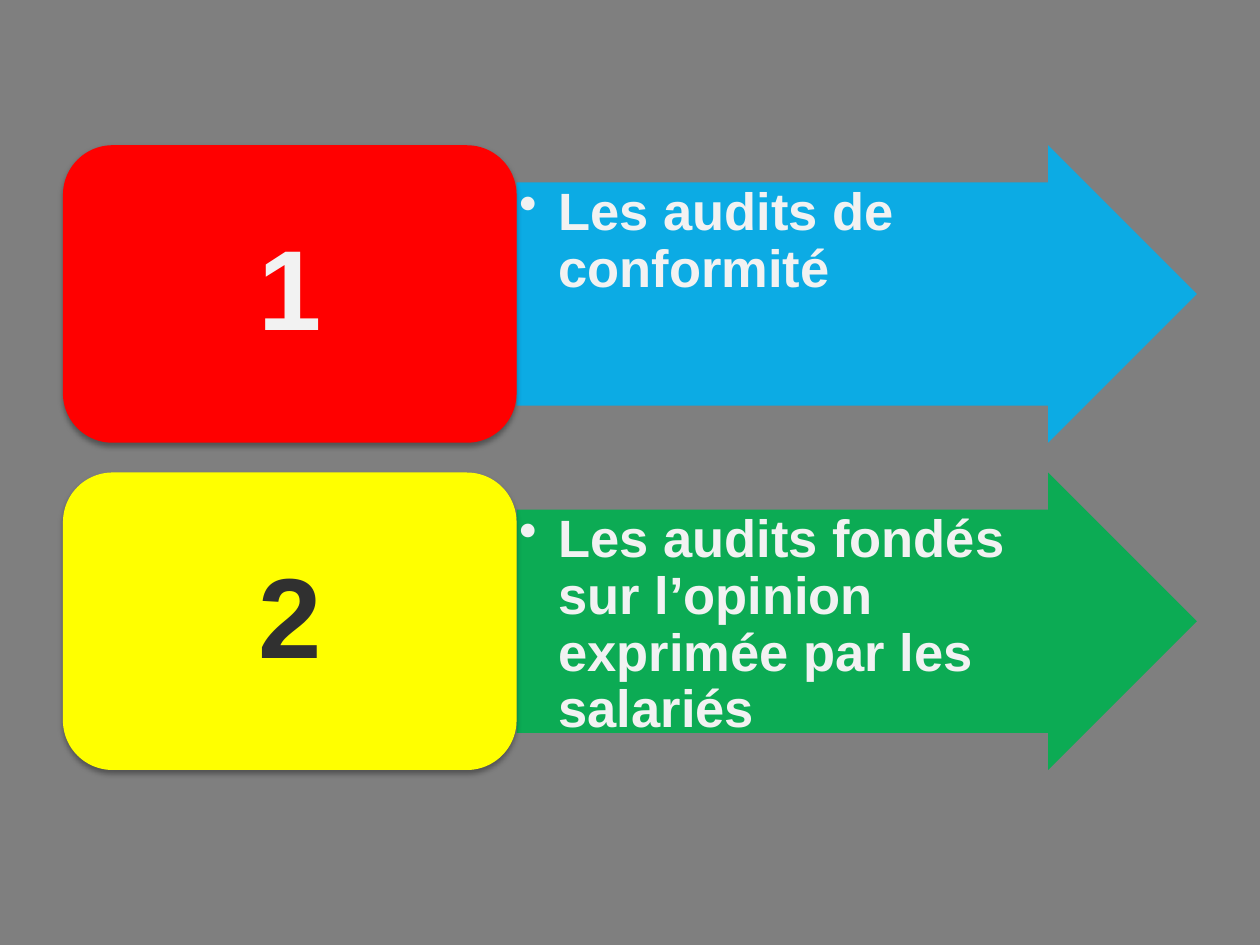
from lxml.etree import SubElement
from pptx import Presentation
from pptx.dml.color import RGBColor
from pptx.enum.shapes import MSO_SHAPE
from pptx.enum.text import MSO_ANCHOR, PP_ALIGN
from pptx.oxml.ns import qn
from pptx.util import Pt

COLORS = {
    "background": "7F7F7F",
    "red": "FF0000",
    "yellow": "FFFF00",
    "blue": "00B0F0",
    "green": "00B050",
    "light": "F2F2F2",
    "dark": "303030",
    "shadow": "000000",
}
ROWS = [
    ("1", "red", "light", "Les audits de conformité", "blue"),
    ("2", "yellow", "dark", "Les audits fondés sur l’opinion exprimée par les salariés", "green"),
]
LEFT, TOP, WIDTH, ROW_HEIGHT, ROW_GAP = 36, 83, 648, 170, 17
CARD_SHARE = 0.4


def color(name):
    """Return the named colour."""
    return RGBColor.from_string(COLORS[name])


def add_filled_shape(page, kind, box, fill):
    """Add a borderless preset shape in the given box."""
    shape = page.shapes.add_shape(kind, *(Pt(length) for length in box))
    shape.shadow.inherit = False
    shape.fill.solid()
    shape.fill.fore_color.rgb = color(fill)
    shape.line.fill.background()
    return shape


def write_text(shape, text, size, ink, anchor, align, margins):
    """Write one bold paragraph into a shape and return it."""
    frame = shape.text_frame
    frame.word_wrap = True
    frame.vertical_anchor = anchor
    frame.margin_left, frame.margin_top, frame.margin_right, frame.margin_bottom = map(Pt, margins)
    frame.text = text
    para = frame.paragraphs[0]
    para.alignment = align
    para.line_spacing = 0.9
    font = para.runs[0].font
    font.name, font.size, font.bold = "Arial", Pt(size), True
    font.color.rgb = color(ink)
    return para


def add_bullet(para, indent):
    """Give a paragraph a round bullet with a hanging indent."""
    properties = para._p.get_or_add_pPr()
    properties.set("marL", str(Pt(indent)))
    properties.set("indent", str(-Pt(indent)))
    SubElement(properties, qn("a:buChar"), char="•")


def add_soft_shadow(shape):
    """Add a small blurred shadow below a shape."""
    effects = shape._element.spPr.find(qn("a:effectLst"))
    shadow = SubElement(effects, qn("a:outerShdw"), blurRad=str(Pt(3.1)),
                        dist=str(Pt(1.8)), dir="5400000", rotWithShape="0")
    tint = SubElement(shadow, qn("a:srgbClr"), val=COLORS["shadow"])
    SubElement(tint, qn("a:alpha"), val="35000")


def add_arrow(page, box, text, fill):
    """Draw the translucent arrow with its bulleted text."""
    arrow = add_filled_shape(page, MSO_SHAPE.RIGHT_ARROW, box, fill)
    arrow.adjustments[0], arrow.adjustments[1] = 0.75, 0.5
    tint = arrow._element.spPr.find(qn("a:solidFill")).find(qn("a:srgbClr"))
    SubElement(tint, qn("a:alpha"), val="90000")
    para = write_text(arrow, text, 30, "light", MSO_ANCHOR.TOP, PP_ALIGN.LEFT, (1.5, 1.5, 43.5, 1.5))
    add_bullet(para, 22.5)


def add_card(page, box, number, fill, ink):
    """Draw the rounded card with its number."""
    card = add_filled_shape(page, MSO_SHAPE.ROUNDED_RECTANGLE, box, fill)
    add_soft_shadow(card)
    write_text(card, number, 65, ink, MSO_ANCHOR.MIDDLE, PP_ALIGN.CENTER, (19.5, 10, 19.5, 10))


def add_row(page, box, number, card_fill, ink, text, arrow_fill):
    """Place an arrow and its numbered card side by side."""
    left, top, width, height = box
    card_width = width * CARD_SHARE
    add_arrow(page, (left + card_width, top, width - card_width, height), text, arrow_fill)
    add_card(page, (left, top, card_width, height), number, card_fill, ink)


def main():
    """Build and save the slide."""
    deck = Presentation()
    deck.slide_width, deck.slide_height = Pt(720), Pt(540)
    page = deck.slides.add_slide(deck.slide_layouts[6])
    page.background.fill.solid()
    page.background.fill.fore_color.rgb = color("background")
    for index, row in enumerate(ROWS):
        top = TOP + index * (ROW_HEIGHT + ROW_GAP)
        add_row(page, (LEFT, top, WIDTH, ROW_HEIGHT), *row)
    deck.save("out.pptx")


if __name__ == "__main__":
    main()
